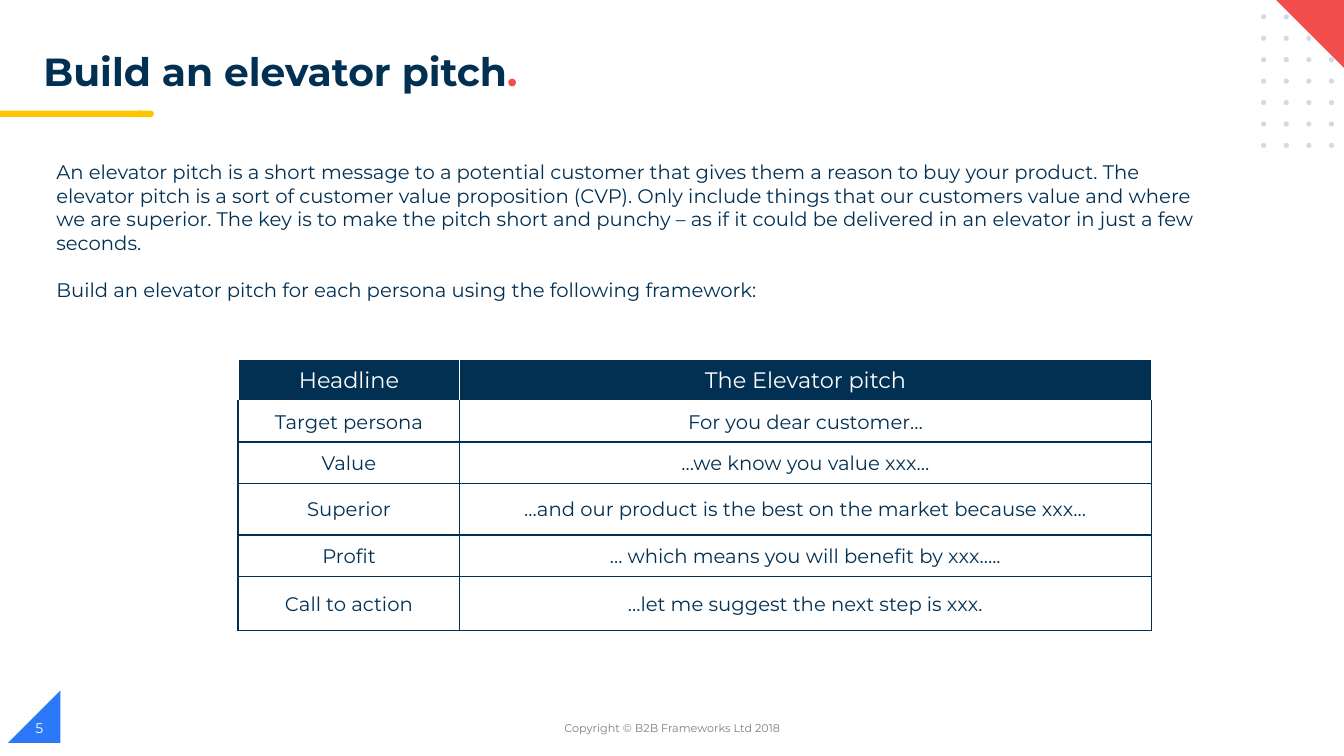
from lxml.etree import SubElement
from pptx import Presentation
from pptx.dml.color import RGBColor
from pptx.enum.shapes import MSO_SHAPE as Preset
from pptx.enum.text import MSO_ANCHOR as Anchor, MSO_AUTO_SIZE as AutoSize, PP_ALIGN as Align
from pptx.oxml.ns import qn
from pptx.util import Cm, Pt

FONT = "Montserrat"
NAVY = RGBColor(0x02, 0x30, 0x53)
RED = RGBColor(0xF2, 0x4E, 0x4E)
YELLOW = RGBColor(0xFF, 0xC6, 0x00)
BLUE = RGBColor(0x2B, 0x79, 0xF8)
PALE = RGBColor(0xD1, 0xDB, 0xE0)
GRAY = RGBColor(0x7F, 0x7F, 0x7F)
WHITE = RGBColor(0xFF, 0xFF, 0xFF)

INTRO = (
    "An elevator pitch is a short message to a potential customer that gives them a reason "
    "to buy your product. The elevator pitch is a sort of customer value proposition (CVP). "
    "Only include things that our customers value and where we are superior. The key is to "
    "make the pitch short and punchy – as if it could be delivered in an elevator in just "
    "a few seconds."
)
TASK = "Build an elevator pitch for each persona using the following framework:"
FRAMEWORK = [
    ("Headline", "The Elevator pitch"),
    ("Target persona", "For you dear customer…"),
    ("Value", "…we know you value xxx…"),
    ("Superior", "…and our product is the best on the market because xxx…"),
    ("Profit", "… which means you will benefit by xxx….."),
    ("Call to action", "…let me suggest the next step is xxx."),
]
COLUMN_WIDTHS = (5.59, 17.42)
ROW_HEIGHTS = (1.04, 1.04, 1.04, 1.3, 1.04, 1.37)


def write(paragraph, text, size=14, color=NAVY, bold=False, align=Align.LEFT, before=0):
    """Add a formatted run to a paragraph."""
    paragraph.alignment = align
    paragraph.space_before = Pt(before)
    run = paragraph.add_run()
    run.text = text
    run.font.name, run.font.size, run.font.bold = FONT, Pt(size), bold
    run.font.color.rgb = color


def add_text_frame(slide, left, top, width, height, anchor=Anchor.TOP):
    box = slide.shapes.add_textbox(Cm(left), Cm(top), Cm(width), Cm(height))
    frame = box.text_frame
    frame.word_wrap = True
    frame.vertical_anchor = anchor
    return frame


def add_decoration(slide, preset, left, top, width, height, color, rotation=0):
    shape = slide.shapes.add_shape(preset, Cm(left), Cm(top), Cm(width), Cm(height))
    shape.shadow.inherit = False
    shape.fill.solid()
    shape.fill.fore_color.rgb = color
    shape.line.fill.background()
    shape.rotation = rotation


def set_borders(cell, color, top_color):
    properties = cell._tc.get_or_add_tcPr()
    sides = (("a:lnL", color), ("a:lnR", color), ("a:lnT", top_color), ("a:lnB", color))
    for position, (side, side_color) in enumerate(sides):
        line = SubElement(properties, qn(side), w=str(Pt(1)))
        fill = SubElement(line, qn("a:solidFill"))
        SubElement(fill, qn("a:srgbClr"), val=str(side_color))
        properties.insert(position, line)  # borders come before the fill


def add_framework(slide):
    framework = slide.shapes.add_table(
        len(FRAMEWORK), len(COLUMN_WIDTHS), Cm(6), Cm(9.06),
        Cm(sum(COLUMN_WIDTHS)), Cm(sum(ROW_HEIGHTS))).table
    framework.first_row = framework.horz_banding = False
    for column, width in zip(framework.columns, COLUMN_WIDTHS):
        column.width = Cm(width)
    for row_number, (row, height) in enumerate(zip(framework.rows, ROW_HEIGHTS)):
        row.height = Cm(height)
        is_header = row_number == 0
        for cell, text in zip(row.cells, FRAMEWORK[row_number]):
            cell.vertical_anchor = Anchor.MIDDLE
            cell.margin_left = cell.margin_right = cell.margin_top = Cm(0.03)
            cell.margin_bottom = 0
            if is_header:
                cell.fill.solid()
                cell.fill.fore_color.rgb = NAVY
            else:
                cell.fill.background()
            set_borders(cell, WHITE if is_header else NAVY,
                        top_color=WHITE if row_number < 2 else NAVY)
            write(cell.text_frame.paragraphs[0], text, size=16 if is_header else 14,
                  color=WHITE if is_header else NAVY, align=Align.CENTER)


def add_decorations(slide):
    # Page number corner
    add_decoration(slide, Preset.RIGHT_TRIANGLE, 0.2, 17.4, 1.32, 1.32, BLUE, rotation=270)
    # Title underline with a rounded end
    add_decoration(slide, Preset.FLOWCHART_TERMINATOR, 3.4, 2.79, 0.48, 0.16, YELLOW)
    add_decoration(slide, Preset.RECTANGLE, 0, 2.79, 3.58, 0.16, YELLOW)
    # Dot grid under the red corner
    for row in range(7):
        for column in range(4):
            add_decoration(slide, Preset.OVAL, 31.78 + 0.57 * column, 0.36 + 0.54 * row,
                           0.13, 0.13, PALE)
    add_decoration(slide, Preset.RIGHT_TRIANGLE, 32.13, -0.03, 1.83, 1.83, RED, rotation=180)


def add_title(slide):
    title = slide.shapes.title
    title.left, title.top, title.width, title.height = Cm(0.84), Cm(1.19), Cm(14.33), Cm(1.42)
    title.text_frame.vertical_anchor = Anchor.TOP
    title.text_frame.auto_size = AutoSize.NONE
    heading = title.text_frame.paragraphs[0]
    heading.line_spacing = 0.9
    write(heading, "Build an elevator pitch", size=28, bold=True)
    write(heading, ".", size=28, color=RED, bold=True)


def main():
    deck = Presentation()
    deck.slide_width, deck.slide_height = Cm(33.87), Cm(19.05)
    slide = deck.slides.add_slide(deck.slide_layouts[5])

    add_decorations(slide)
    add_title(slide)
    add_framework(slide)

    # Introduction
    introduction = add_text_frame(slide, 1.17, 3.91, 29.82, 3.25)
    write(introduction.paragraphs[0], INTRO)
    write(introduction.add_paragraph(), TASK, before=17)

    # Footer
    copyright_line = add_text_frame(slide, 11.23, 17.83, 11.43, 1.02, Anchor.MIDDLE)
    write(copyright_line.paragraphs[0], "Copyright © B2B Frameworks Ltd 2018",
          size=8, color=GRAY, align=Align.CENTER)
    page_number = add_text_frame(slide, 0.64, 17.83, 7.62, 1.02, Anchor.MIDDLE)
    write(page_number.paragraphs[0], "5", size=10, color=WHITE)

    deck.save("out.pptx")


if __name__ == "__main__":
    main()
